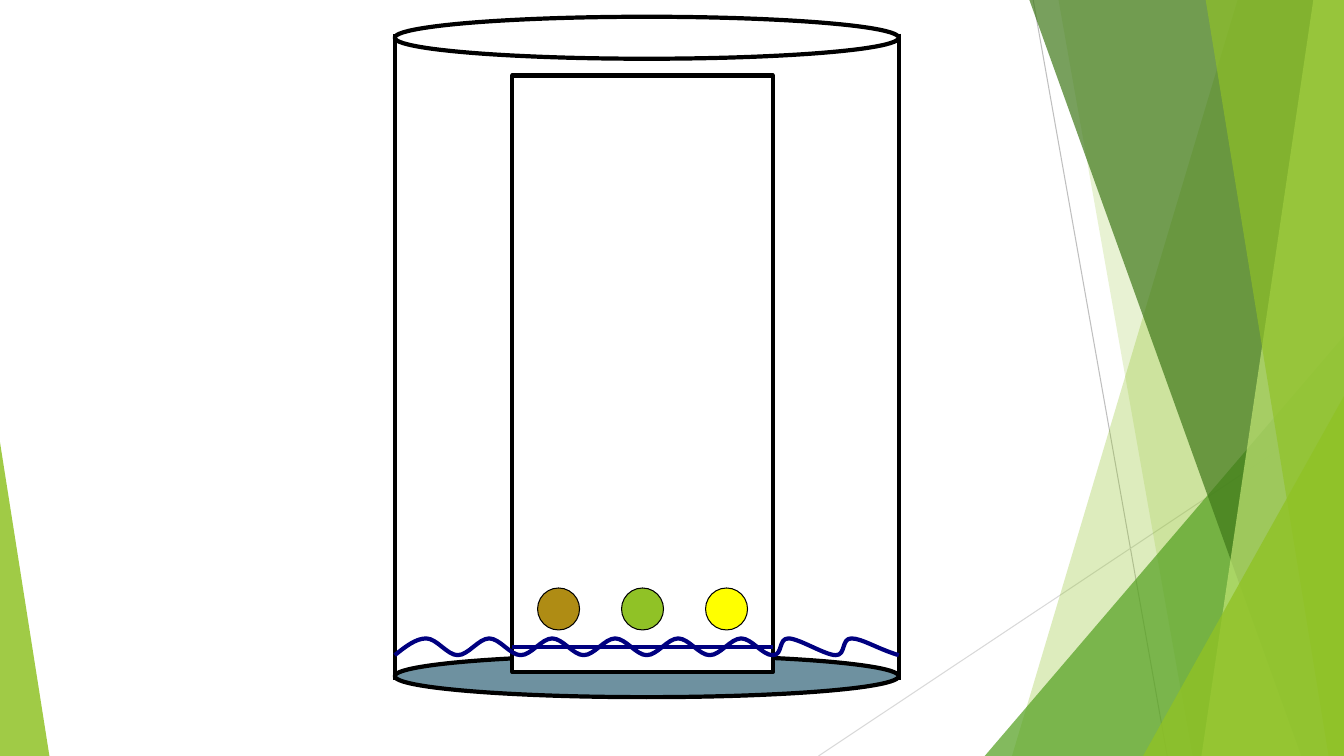
import dataclasses

import lxml.etree
import pptx
import pptx.dml.color
import pptx.enum.shapes
import pptx.oxml.ns
import pptx.util

Pt = pptx.util.Pt
SHAPE = pptx.enum.shapes.MSO_SHAPE
qn = pptx.oxml.ns.qn


@dataclasses.dataclass(frozen=True)
class Theme:
    """Colours and line widths, in points, of the slide."""

    ink: str = "000000"
    paper: str = "FFFFFF"
    solvent: str = "000080"
    base: str = "6E91A0"
    brown: str = "AF8C14"
    yellow: str = "FFFF00"
    lime: str = "90C226"
    green: str = "54A021"
    forest: str = "3F7819"
    pale: str = "C0E474"
    grey: str = "BFBFBF"
    light_grey: str = "D9D9D9"
    thick: float = 3
    thin: float = 0.75


THEME = Theme()
WIDTH, HEIGHT = 960, 540
JAR_LEFT, JAR_RIGHT = 282, 642
PLATE_LEFT, PLATE_RIGHT = 366, 552
CREST, TROUGH = 456, 468


def rgb(colour):
    """Turn a hex string into a colour."""
    return pptx.dml.color.RGBColor.from_string(colour)


def style(shape, fill=None, line=None, line_width=THEME.thick, opacity=100):
    """Set fill, opacity and outline of a shape, without shadow."""
    shape.shadow.inherit = False
    if fill:
        shape.fill.solid()
        shape.fill.fore_color.rgb = rgb(fill)
    else:
        shape.fill.background()
    if opacity < 100:
        colour = shape._element.spPr.find(qn("a:solidFill"))[0]
        lxml.etree.SubElement(colour, qn("a:alpha"), val=str(opacity * 1000))
    if line:
        shape.line.color.rgb = rgb(line)
        shape.line.width = Pt(line_width)
    else:
        shape.line.fill.background()


def add_preset(slide, kind, left, top, width, height, **look):
    """Add a styled preset shape."""
    shape = slide.shapes.add_shape(kind, Pt(left), Pt(top), Pt(width), Pt(height))
    style(shape, **look)
    return shape


def add_line(slide, start, end, colour, line_width=THEME.thick):
    """Add a straight line between two points."""
    connector = slide.shapes.add_connector(
        pptx.enum.shapes.MSO_CONNECTOR.STRAIGHT, *map(Pt, start + end))
    connector.line.color.rgb = rgb(colour)
    connector.line.width = Pt(line_width)
    lxml.etree.SubElement(connector._element.spPr, qn("a:effectLst"))


def add_outline(slide, points, close, **look):
    """Add a styled freeform through the points."""
    start, *rest = [(Pt(x), Pt(y)) for x, y in points]
    builder = slide.shapes.build_freeform(*start)
    builder.add_line_segments(rest, close=close)
    shape = builder.convert_to_shape()
    style(shape, **look)
    return shape


def add_band(slide, top_x, bottom_x, colour, opacity):
    """Add a slanted band that reaches the right edge of the slide."""
    corners = [(top_x, -0.6), (WIDTH, -0.6), (WIDTH, HEIGHT), (bottom_x, HEIGHT)]
    add_outline(slide, corners, True, fill=colour, opacity=opacity)


def add_corner(slide, left, top, width, tip, colour, opacity):
    """Add a right triangle standing on the bottom edge of the slide."""
    triangle = add_preset(slide, SHAPE.ISOSCELES_TRIANGLE, left, top, width,
                          HEIGHT - top, fill=colour, opacity=opacity)
    triangle.adjustments[0] = tip


def add_curve(slide, points, **look):
    """Add a Bézier curve: a start, then two handles and an end per segment."""
    shape = add_outline(slide, points, False, **look)
    segments = list(shape._element.iter(qn("a:lnTo")))
    for first, second, third in zip(*[iter(segments)] * 3):
        first.tag = qn("a:cubicBezTo")
        for segment in (second, third):
            first.append(segment[0])
            segment.getparent().remove(segment)


def add_backdrop(slide):
    """Add the green facets at both sides."""
    add_line(slide, (738, 0), (833.76, HEIGHT), THEME.grey, THEME.thin)
    add_line(slide, (WIDTH, 290.16), (584.64, HEIGHT), THEME.light_grey, THEME.thin)
    add_band(slide, 884.2, 722.9, THEME.lime, 30)
    add_band(slide, 756, 851.8, THEME.lime, 20)
    add_corner(slide, 703.4, 240, 256.6, 1, THEME.green, 72)
    add_band(slide, 735.1, 929.5, THEME.forest, 70)
    add_band(slide, 938.2, 858.2, THEME.pale, 70)
    add_band(slide, 861.1, 949, THEME.lime, 65)
    add_corner(slide, 816.5, 283, 143.5, 1, THEME.lime, 80)
    add_corner(slide, 0, 316, 35.3, 0, THEME.lime, 85)


def add_jar(slide):
    """Add the glass jar with its filled base and open rim."""
    width = JAR_RIGHT - JAR_LEFT
    add_preset(slide, SHAPE.OVAL, JAR_LEFT, 468, width, 30,
               fill=THEME.base, line=THEME.ink)
    for x in (JAR_LEFT, JAR_RIGHT):
        add_line(slide, (x, 24), (x, 486), THEME.ink)
    add_preset(slide, SHAPE.OVAL, JAR_LEFT, 12, width, 30, line=THEME.ink)


def add_plate(slide):
    """Add the plate with its three sample spots."""
    add_preset(slide, SHAPE.RECTANGLE, PLATE_LEFT, 54, PLATE_RIGHT - PLATE_LEFT, 426,
               fill=THEME.paper, line=THEME.ink)
    for index, colour in enumerate((THEME.brown, THEME.lime, THEME.yellow)):
        add_preset(slide, SHAPE.OVAL, 384 + 60 * index, 420, 30, 30,
                   fill=colour, line=THEME.ink, line_width=THEME.thin)


def add_solvent(slide):
    """Add the wavy solvent surface and the straight start line."""
    handle = 7.5
    turns = [JAR_LEFT + 22.5 * step for step in range(13)] + [563.25, 597, 608.25]
    knots = [(x, CREST if index % 2 else TROUGH) for index, x in enumerate(turns)]
    wave = [knots[0]]
    for (x, y), (next_x, next_y) in zip(knots, knots[1:]):
        wave += [(x + handle, y), (next_x - handle, next_y), (next_x, next_y)]
    wave[1] = (JAR_LEFT + handle, 462)
    wave += [(turns[-1] + handle, CREST), (627, 463.5), (JAR_RIGHT, TROUGH)]
    add_curve(slide, wave, line=THEME.solvent)
    add_line(slide, (PLATE_LEFT, 462), (PLATE_RIGHT, 462), THEME.solvent)


def main():
    """Build the slide and save it."""
    presentation = pptx.Presentation()
    presentation.slide_width = Pt(WIDTH)
    presentation.slide_height = Pt(HEIGHT)
    slide = presentation.slides.add_slide(presentation.slide_layouts[6])
    add_backdrop(slide)
    add_jar(slide)
    add_plate(slide)
    add_solvent(slide)
    presentation.save("out.pptx")


if __name__ == "__main__":
    main()
